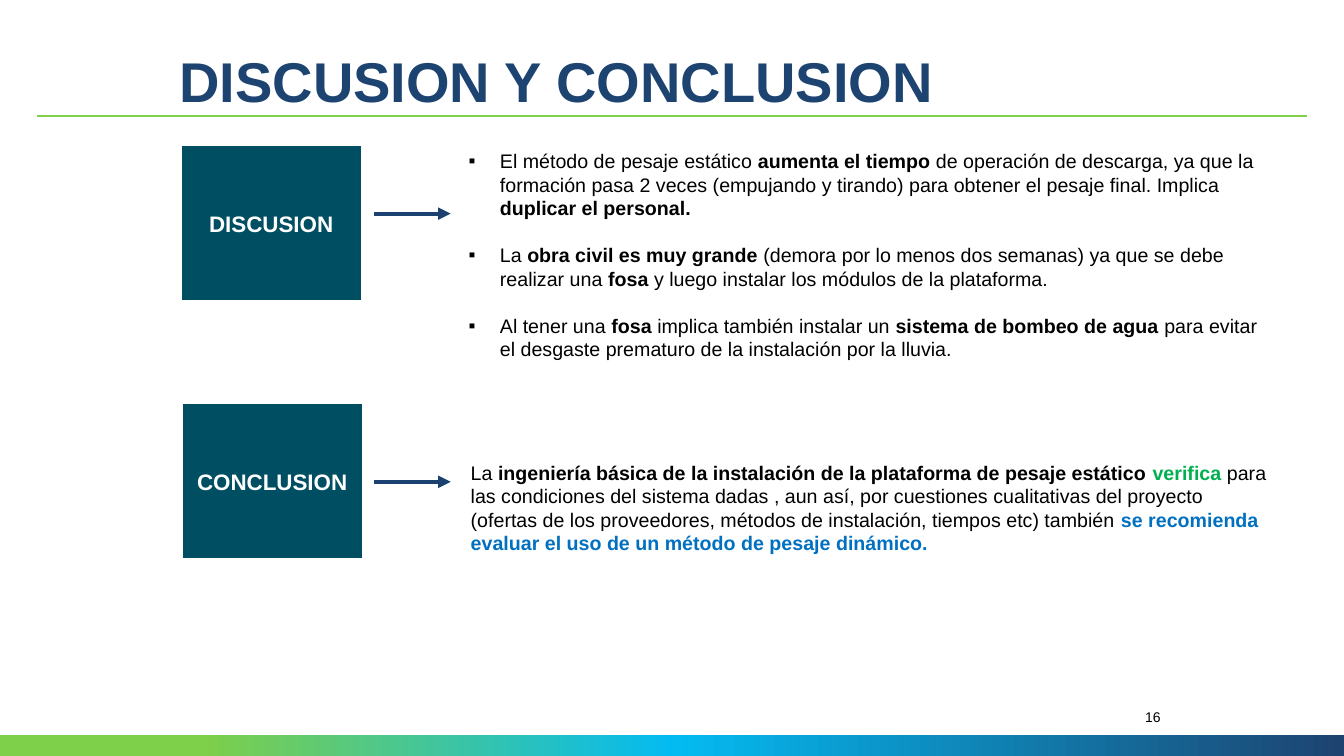
"""Builds the discussion and conclusion slide."""
from dataclasses import dataclass

from lxml import etree
from pptx import Presentation
from pptx import util as u
from pptx.dml.color import RGBColor
from pptx.enum import shapes, text
from pptx.oxml import ns

EMU_PER_PX = 9144


@dataclass(frozen=True)
class Theme:
    font: str = "Arial"
    white: str = "FFFFFF"
    black: str = "000000"
    navy: str = "1D4370"
    arrow: str = "1A4170"
    teal: str = "004E61"
    lime: str = "7ECF49"
    sky: str = "04BBF1"
    green: str = "00B050"
    blue: str = "0070C0"
    title_size: int = 40
    label_size: int = 16
    body_size: int = 14
    number_size: int = 10
    paragraph_gap: float = 16.8


THEME = Theme()


@dataclass(frozen=True)
class Box:
    left: int
    top: int
    width: int
    height: int

    def emu(self) -> list[int]:
        return [px(self.left), px(self.top), px(self.width), px(self.height)]


@dataclass(frozen=True)
class Span:
    words: str
    bold: bool = False
    color: str = THEME.black
    size: int = THEME.body_size


@dataclass(frozen=True)
class Section:
    label: str
    label_box: Box
    arrow_y: int
    body_box: Box
    paragraphs: list[list[Span]]
    bulleted: bool = False


SECTIONS = [
    Section("DISCUSION", Box(178, 143, 182, 157), 212, Box(455, 143, 815, 281), [
        [Span("El método de pesaje estático "), Span("aumenta el tiempo ", True),
         Span("de operación de descarga, ya que la formación pasa 2 veces (empujando y "
              "tirando) para obtener el pesaje final. Implica "),
         Span("duplicar el personal.", True)],
        [Span("La "), Span("obra civil es muy grande ", True),
         Span("(demora por lo menos dos semanas) ya que se debe realizar una "),
         Span("fosa ", True),
         Span("y luego instalar los módulos de la plataforma.")],
        [Span("Al tener una "), Span("fosa", True),
         Span(" implica también instalar un "),
         Span("sistema de bombeo de agua ", True),
         Span("para evitar el desgaste prematuro de la instalación por la lluvia.")],
    ], bulleted=True),
    Section("CONCLUSION", Box(179, 399, 182, 157), 478, Box(457, 452, 815, 104), [
        [Span("La "),
         Span("ingeniería básica de la instalación de la plataforma de pesaje estático ", True),
         Span("verifica", True, THEME.green),
         Span(" para las condiciones del sistema dadas , aun así, por cuestiones "
              "cualitativas del proyecto (ofertas de los proveedores, métodos de "
              "instalación, tiempos etc) también "),
         Span("se recomienda evaluar el uso de un método de pesaje dinámico.", True, THEME.blue)],
    ]),
]


def px(value: int) -> int:
    return value * EMU_PER_PX


def rgb(color: str) -> RGBColor:
    return RGBColor.from_string(color)


def add_spans(paragraph, spans: list[Span]) -> None:
    for span in spans:
        run = paragraph.add_run()
        run.text = span.words
        run.font.name = THEME.font
        run.font.size = u.Pt(span.size)
        run.font.bold = span.bold
        run.font.color.rgb = rgb(span.color)


def set_margins(frame, horizontal: int, vertical: int) -> None:
    frame.margin_left = frame.margin_right = px(horizontal)
    frame.margin_top = frame.margin_bottom = px(vertical)


def add_bullet(paragraph) -> None:
    properties = paragraph._p.get_or_add_pPr()
    properties.set("marL", str(px(31)))
    properties.set("indent", str(-px(31)))
    color = etree.SubElement(properties, ns.qn("a:buClr"))
    etree.SubElement(color, ns.qn("a:srgbClr"), val=THEME.black)
    etree.SubElement(properties, ns.qn("a:buFont"), typeface=THEME.font)
    etree.SubElement(properties, ns.qn("a:buChar"), char="▪")


def add_line(slide, start: tuple[int, int], end: tuple[int, int], color: str,
             width: int, arrow: bool = False) -> None:
    connector = slide.shapes.add_connector(
        shapes.MSO_CONNECTOR.STRAIGHT, *map(px, start + end))
    connector.line.color.rgb = rgb(color)
    connector.line.width = u.Pt(width)
    if arrow:
        etree.SubElement(connector.line._get_or_add_ln(), ns.qn("a:tailEnd"), type="triangle")
    etree.SubElement(connector._element.spPr, ns.qn("a:effectLst"))


def add_rectangle(slide, box: Box):
    shape = slide.shapes.add_shape(shapes.MSO_SHAPE.RECTANGLE, *box.emu())
    shape.shadow.inherit = False
    return shape


def add_footer_band(slide) -> None:
    band = add_rectangle(slide, Box(0, 729, 1333, 21))
    band.line.fill.background()
    band.fill.gradient()
    band.fill.gradient_angle = 0
    stops = band._element.spPr.find(".//" + ns.qn("a:gsLst"))
    for stop in list(stops):
        stops.remove(stop)
    for percent, color in ((0, THEME.lime), (15, THEME.lime), (50, THEME.sky), (100, THEME.navy)):
        stop = etree.SubElement(stops, ns.qn("a:gs"), pos=str(percent * 1000))
        etree.SubElement(stop, ns.qn("a:srgbClr"), val=color)


def add_bottom_text(slide, box: Box, span: Span, align: text.PP_ALIGN, spacing: float) -> None:
    frame = slide.shapes.add_textbox(*box.emu()).text_frame
    frame.word_wrap = True
    frame.vertical_anchor = text.MSO_ANCHOR.BOTTOM
    set_margins(frame, 0, 0)
    paragraph = frame.paragraphs[0]
    paragraph.alignment = align
    paragraph.line_spacing = spacing
    add_spans(paragraph, [span])


def add_label(slide, section: Section) -> None:
    shape = add_rectangle(slide, section.label_box)
    shape.fill.solid()
    shape.fill.fore_color.rgb = rgb(THEME.teal)
    shape.line.color.rgb = rgb(THEME.white)
    shape.line.width = u.Pt(3)
    frame = shape.text_frame
    frame.word_wrap = True
    frame.vertical_anchor = text.MSO_ANCHOR.MIDDLE
    set_margins(frame, 8, 8)
    paragraph = frame.paragraphs[0]
    paragraph.alignment = text.PP_ALIGN.CENTER
    add_spans(paragraph, [Span(section.label, True, THEME.white, THEME.label_size)])


def add_body(slide, section: Section) -> None:
    frame = slide.shapes.add_textbox(*section.body_box.emu()).text_frame
    frame.word_wrap = True
    set_margins(frame, 10, 5)
    for index, spans in enumerate(section.paragraphs):
        paragraph = frame.add_paragraph() if index else frame.paragraphs[0]
        if section.bulleted:
            add_bullet(paragraph)
        if index:
            paragraph.space_before = u.Pt(THEME.paragraph_gap)
        add_spans(paragraph, spans)


def main() -> None:
    presentation = Presentation()
    presentation.slide_width, presentation.slide_height = px(1333), px(750)
    slide = presentation.slides.add_slide(presentation.slide_layouts[6])
    add_footer_band(slide)
    add_line(slide, (1296, 115), (37, 115), THEME.lime, 1)
    add_bottom_text(slide, Box(1104, 702, 47, 18), Span("16", size=THEME.number_size),
                    text.PP_ALIGN.RIGHT, 1.0)
    add_bottom_text(slide, Box(178, 21, 1091, 93),
                    Span("DISCUSION Y CONCLUSION", True, THEME.navy, THEME.title_size),
                    text.PP_ALIGN.LEFT, 0.95)
    for section in SECTIONS:
        add_label(slide, section)
        add_line(slide, (371, section.arrow_y), (447, section.arrow_y), THEME.arrow, 3, arrow=True)
        add_body(slide, section)
    presentation.save("out.pptx")


if __name__ == "__main__":
    main()
